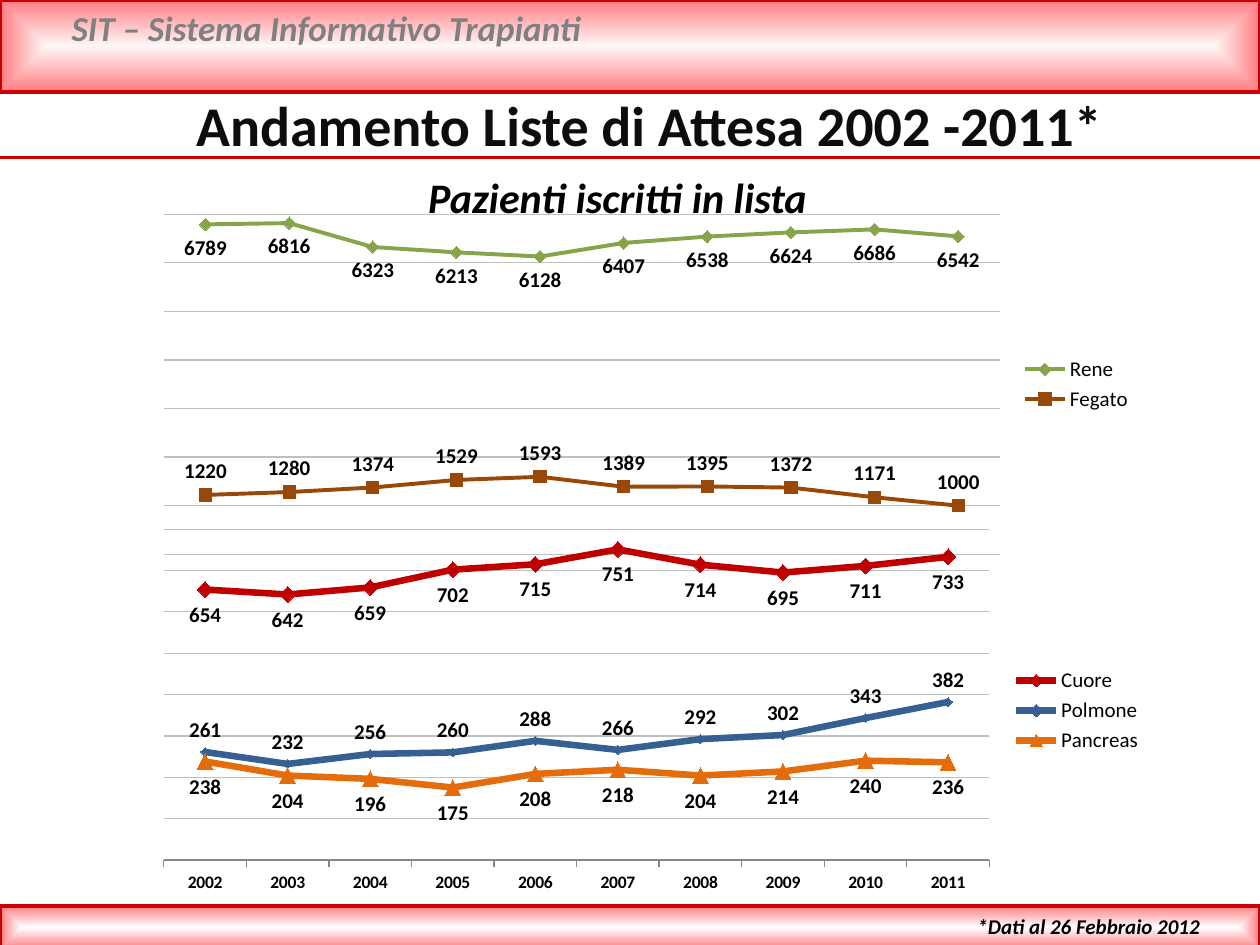
from dataclasses import dataclass

from lxml.etree import SubElement
from pptx import Presentation
from pptx.chart.data import CategoryChartData
from pptx.dml.color import RGBColor
from pptx.enum.chart import (XL_CHART_TYPE, XL_LABEL_POSITION, XL_LEGEND_POSITION,
                             XL_MARKER_STYLE, XL_TICK_LABEL_POSITION, XL_TICK_MARK)
from pptx.enum.shapes import MSO_CONNECTOR, MSO_SHAPE
from pptx.enum.text import MSO_ANCHOR, PP_ALIGN
from pptx.oxml import parse_xml
from pptx.oxml.ns import nsdecls, qn
from pptx.util import Inches, Pt


@dataclass(frozen=True)
class Theme:
    font: str = "Calibri"
    black: str = "000000"
    ink: str = "0D0D0D"
    gray: str = "808080"
    red: str = "CC0000"
    pink: str = "FF7C80"
    pale: str = "FFF6F6"
    white: str = "FFFFFF"
    grid: str = "BFBFBF"
    axis: str = "868686"
    title: int = 32
    sub: int = 24
    head: int = 20
    small: int = 12
    tick: int = 10


T = Theme()
DIAMOND, SQUARE, TRIANGLE = (XL_MARKER_STYLE.DIAMOND, XL_MARKER_STYLE.SQUARE,
                             XL_MARKER_STYLE.TRIANGLE)
ABOVE, BELOW = XL_LABEL_POSITION.ABOVE, XL_LABEL_POSITION.BELOW

# Name, values, line colour, marker, marker size, marker colour, label side
MAJOR = [
    ("Rene", (6789, 6816, 6323, 6213, 6128, 6407, 6538, 6624, 6686, 6542),
     "86A44A", DIAMOND, 7, "77933C", BELOW),
    ("Fegato", (1220, 1280, 1374, 1529, 1593, 1389, 1395, 1372, 1171, 1000),
     "984807", SQUARE, 7, "984807", ABOVE),
]
MINOR = [
    ("Cuore", (654, 642, 659, 702, 715, 751, 714, 695, 711, 733),
     "C00000", DIAMOND, 9, "C00000", BELOW),
    ("Polmone", (261, 232, 256, 260, 288, 266, 292, 302, 343, 382),
     "376092", DIAMOND, 5, "376092", ABOVE),
    ("Pancreas", (238, 204, 196, 175, 208, 218, 204, 214, 240, 236),
     "E46C0A", TRIANGLE, 9, "E46C0A", BELOW),
]


def rgb(code):
    return RGBColor.from_string(code)


def inches(box):
    return [Inches(v) for v in box]


def style(font, size, color=T.black, bold=False, italic=False):
    font.name, font.size = T.font, Pt(size)
    font.bold, font.italic = bold, italic
    font.color.rgb = rgb(color)


def stroke(line, color, width):
    line.color.rgb = rgb(color)
    line.width = Pt(width)


def write(slide, box, text, shape=None, align=PP_ALIGN.LEFT, **look):
    """Put formatted text in a new text box or in the given shape."""
    shape = shape or slide.shapes.add_textbox(*inches(box))
    shape.left, shape.top, shape.width, shape.height = inches(box)
    frame = shape.text_frame
    frame.word_wrap = True
    frame.vertical_anchor = MSO_ANCHOR.TOP
    para = frame.paragraphs[0]
    para.alignment = align
    run = para.add_run()
    run.text = text
    style(run.font, **look)


def band(slide, box, inner):
    """Bordered bar that shades from its centre to its edges."""
    bar = slide.shapes.add_shape(MSO_SHAPE.RECTANGLE, *inches(box))
    bar.shadow.inherit = False
    stroke(bar.line, T.red, 2)
    fill = parse_xml(
        f'<a:gradFill {nsdecls("a")} rotWithShape="1"><a:gsLst>'
        f'<a:gs pos="0"><a:srgbClr val="{inner}"/></a:gs>'
        f'<a:gs pos="100000"><a:srgbClr val="{T.pink}"/></a:gs></a:gsLst>'
        '<a:path path="shape"><a:fillToRect l="50000" t="50000" r="50000" b="50000"/>'
        '</a:path></a:gradFill>')
    bar._element.spPr.find(qn("a:prstGeom")).addnext(fill)


def header(slide, box):
    x, y, w, h = box
    band(slide, (x, y, w, 0.73), T.pale)
    write(slide, (x + 0.47, y, 8.98, 0.44), "SIT – Sistema Informativo Trapianti",
          size=T.head, color=T.gray, bold=True, italic=True)
    write(slide, (x + 1.14, y + 0.67, 8.03, 0.64),
          "Andamento Liste di Attesa 2002 -2011*", shape=slide.shapes.title,
          align=PP_ALIGN.CENTER, size=T.title, color=T.ink, bold=True)
    # Rule under the title
    rule = slide.shapes.add_connector(MSO_CONNECTOR.STRAIGHT,
                                      *inches((x, y + h, x + w, y + h)))
    stroke(rule.line, T.red, 2)
    SubElement(rule._element.spPr, qn("a:effectLst"))


def footer(slide, box):
    x, y, w, h = box
    band(slide, box, T.white)
    write(slide, (x + 7.66, y + 0.01, 2.3, 0.3), "*Dati al 26 Febbraio 2012",
          size=T.small, bold=True, italic=True)


def clear(chart):
    """Make chart and plot backgrounds transparent."""
    root = chart._chartSpace
    blank = f'<c:spPr {nsdecls("c", "a")}><a:noFill/><a:ln><a:noFill/></a:ln></c:spPr>'
    root.find(qn("c:chart")).addnext(parse_xml(blank))
    root.find(".//" + qn("c:plotArea")).append(parse_xml(blank))


def place(chart, area):
    """Fix the plot area as fractions of the chart."""
    plot = chart._chartSpace.find(".//" + qn("c:plotArea"))
    old = plot.find(qn("c:layout"))
    if old is not None:
        plot.remove(old)
    items = "".join(f'<c:{k} val="{v}"/>' for k, v in zip("xywh", area))
    plot.insert(0, parse_xml(
        f'<c:layout {nsdecls("c")}><c:manualLayout><c:xMode val="edge"/>'
        f'<c:yMode val="edge"/>{items}</c:manualLayout></c:layout>'))


def trend(slide, box, cats, rows, top, step, width, years=False, area=None):
    """Line chart with markers, value labels and a legend at right."""
    data = CategoryChartData()
    data.categories = cats
    for name, values, *_ in rows:
        data.add_series(name, values)
    chart = slide.shapes.add_chart(XL_CHART_TYPE.LINE_MARKERS, *inches(box), data).chart
    chart.has_title = False
    style(chart.font, T.tick)
    chart.has_legend = True
    chart.legend.position = XL_LEGEND_POSITION.RIGHT
    chart.legend.include_in_layout = False
    style(chart.legend.font, T.small)
    chart.plots[0].vary_by_categories = False

    # Axes
    scale = chart.value_axis
    scale.minimum_scale, scale.maximum_scale, scale.major_unit = 0, top, step
    scale.has_major_gridlines = True
    stroke(scale.major_gridlines.format.line, T.grid, 0.75)
    scale.visible = False
    axis = chart.category_axis
    axis.visible = years
    if years:
        axis.major_tick_mark = XL_TICK_MARK.OUTSIDE
        axis.tick_label_position = XL_TICK_LABEL_POSITION.NEXT_TO_AXIS
        stroke(axis.format.line, T.axis, 0.75)
        style(axis.tick_labels.font, T.tick, bold=True)

    # Series
    for line, (_, _, color, mark, size, tint, side) in zip(chart.plots[0].series, rows):
        line.smooth = False
        stroke(line.format.line, color, width)
        line.marker.style, line.marker.size = mark, size
        line.marker.format.fill.solid()
        line.marker.format.fill.fore_color.rgb = rgb(tint)
        line.marker.format.line.color.rgb = rgb(color)
        labels = line.data_labels
        labels.show_value, labels.position = True, side
        style(labels.font, T.small, bold=True)
    clear(chart)
    if area:
        place(chart, area)


def main():
    deck = Presentation()
    deck.slide_width, deck.slide_height = Inches(10), Inches(7.5)
    slide = deck.slides.add_slide(deck.slide_layouts[5])
    header(slide, (0, 0, 10, 1.25))
    footer(slide, (0, 7.19, 10, 0.34))
    trend(slide, (1.14, 1.55, 7.95, 3), [str(n) for n in range(1, 11)], MAJOR,
          7000, 1000, 2.25, area=(0.02, 0.05, 0.835, 0.9))
    write(slide, (2.79, 1.31, 4.22, 0.51), "Pazienti iscritti in lista",
          align=PP_ALIGN.CENTER, size=T.sub, bold=True, italic=True)
    trend(slide, (1.14, 4.14, 8.03, 3), [str(n) for n in range(2002, 2012)], MINOR,
          800, 100, 3.75, years=True)
    deck.save("out.pptx")


if __name__ == "__main__":
    main()
